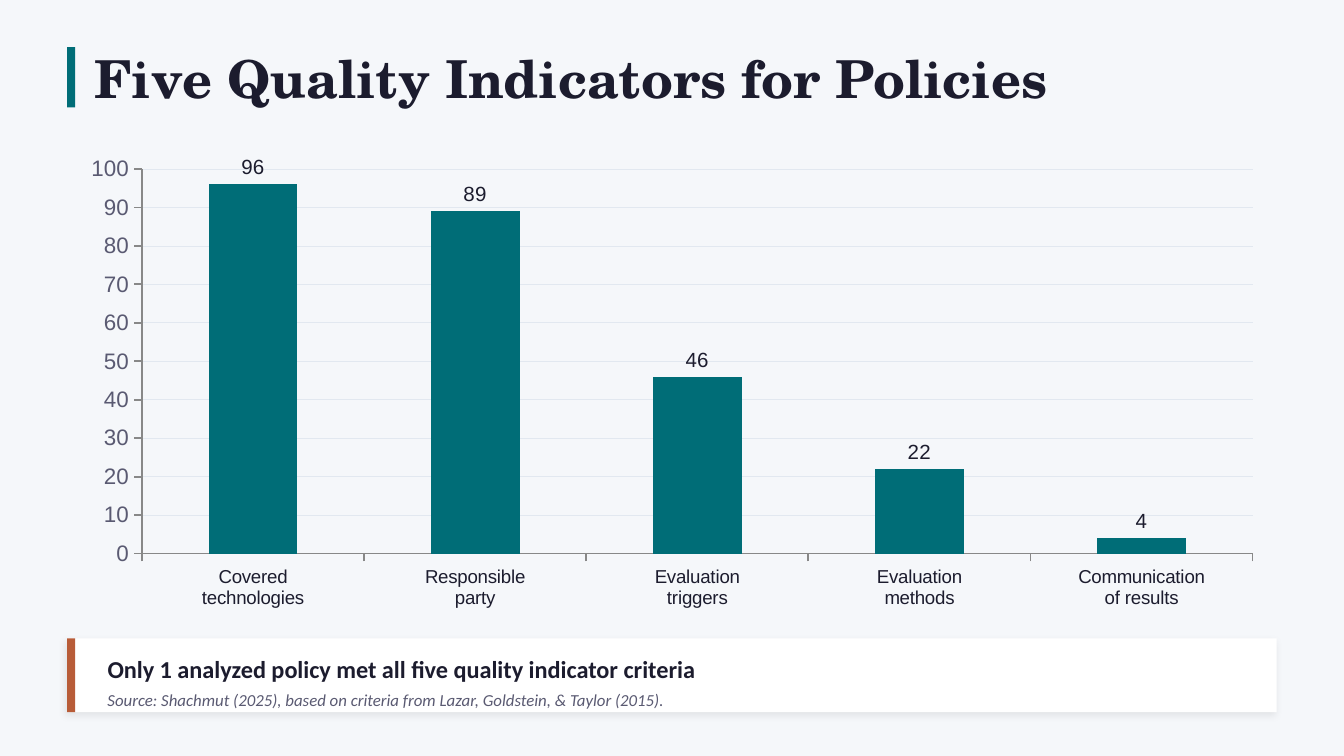
from lxml.etree import SubElement
from pptx import Presentation
from pptx.chart.data import CategoryChartData
from pptx.dml.color import RGBColor
from pptx.enum.chart import XL_CHART_TYPE, XL_LABEL_POSITION, XL_TICK_LABEL_POSITION, XL_TICK_MARK
from pptx.enum.shapes import MSO_SHAPE
from pptx.enum.text import MSO_ANCHOR, PP_ALIGN
from pptx.oxml.ns import qn
from pptx.util import Inches, Pt

COLORS = {
    "bg": "F5F7FA", "teal": "006D77", "ink": "1C1C2E", "muted": "5A5A72",
    "rust": "B85C38", "white": "FFFFFF", "axis": "888888", "grid": "E2E8F0",
    "black": "000000",
}
INDICATORS = {
    "Covered\ntechnologies": 96,
    "Responsible\nparty": 89,
    "Evaluation\ntriggers": 46,
    "Evaluation\nmethods": 22,
    "Communication\nof results": 4,
}


def color(name):
    return RGBColor.from_string(COLORS[name])


def format_font(font, size, fill, name="Calibri", bold=False, italic=False):
    font.size, font.name, font.bold, font.italic = Pt(size), name, bold, italic
    font.color.rgb = color(fill)


def write(sp, text, **style):
    tf = sp.text_frame
    tf.word_wrap = True
    tf.vertical_anchor = MSO_ANCHOR.MIDDLE
    tf.margin_left = tf.margin_top = tf.margin_right = tf.margin_bottom = 0
    p = tf.paragraphs[0]
    p.alignment = PP_ALIGN.LEFT
    r = p.add_run()
    r.text = text
    format_font(r.font, **style)


class SlideBuilder:
    """Hold the slide and add styled elements to it."""

    def __init__(self, prs):
        self.slide = prs.slides.add_slide(prs.slide_layouts[5])
        self.slide.background.fill.solid()
        self.slide.background.fill.fore_color.rgb = color("bg")

    def title(self, text, x, y, w, h):
        sp = self.slide.shapes.title
        sp.left, sp.top, sp.width, sp.height = map(Inches, (x, y, w, h))
        write(sp, text, size=28, fill="ink", name="TeX Gyre Schola", bold=True)

    def text(self, text, x, y, w, h, **style):
        write(self.slide.shapes.add_textbox(*map(Inches, (x, y, w, h))), text, **style)

    def rect(self, fill, x, y, w, h, shadow=False):
        sp = self.slide.shapes.add_shape(MSO_SHAPE.RECTANGLE, *map(Inches, (x, y, w, h)))
        sp.fill.solid()
        sp.fill.fore_color.rgb = color(fill)
        sp.line.fill.background()
        sp.shadow.inherit = False
        if shadow:
            effects = sp._element.spPr.find(qn("a:effectLst"))
            outer = SubElement(effects, qn("a:outerShdw"), blurRad=str(Pt(4)),
                               dist=str(Pt(2)), dir=str(135 * 60000),
                               algn="bl", rotWithShape="0")
            tint = SubElement(outer, qn("a:srgbClr"), val=COLORS["black"])
            SubElement(tint, qn("a:alpha"), val="8000")

    def axis(self, axis, size, fill):
        axis.major_tick_mark = XL_TICK_MARK.OUTSIDE
        axis.minor_tick_mark = XL_TICK_MARK.NONE
        axis.format.line.color.rgb = color("axis")
        axis.format.line.width = Pt(1)
        format_font(axis.tick_labels.font, size, fill, "Arial")

    def column_chart(self, values, x, y, w, h):
        data = CategoryChartData()
        data.categories = list(values)
        data.add_series("Series 1", list(values.values()))
        chart = self.slide.shapes.add_chart(
            XL_CHART_TYPE.COLUMN_CLUSTERED, *map(Inches, (x, y, w, h)), data).chart
        chart.has_legend = chart.has_title = False
        format_font(chart.font, 10, "black")

        categories, scale = chart.category_axis, chart.value_axis
        self.axis(categories, 10, "ink")
        categories.tick_label_position = XL_TICK_LABEL_POSITION.LOW
        categories.has_major_gridlines = False
        self.axis(scale, 12, "muted")
        scale.minimum_scale, scale.maximum_scale, scale.major_unit = 0, 100, 10
        scale.has_major_gridlines = True
        scale.major_gridlines.format.line.color.rgb = color("grid")
        scale.major_gridlines.format.line.width = Pt(0.5)

        plot = chart.plots[0]
        plot.gap_width = 150
        plot.vary_by_categories = False
        bars = plot.series[0]
        bars.format.fill.solid()
        bars.format.fill.fore_color.rgb = color("teal")
        labels = bars.data_labels
        labels.show_value = True
        labels.number_format = "#,##0"
        labels.number_format_is_linked = False
        labels.position = XL_LABEL_POSITION.OUTSIDE_END
        format_font(labels.font, 11, "ink", "Arial")


def main():
    prs = Presentation()
    prs.slide_width, prs.slide_height = Inches(10), Inches(5.625)
    page = SlideBuilder(prs)
    page.rect("teal", 0.5, 0.35, 0.06, 0.45)
    page.title("Five Quality Indicators for Policies", 0.7, 0.3, 8.5, 0.55)
    page.column_chart(INDICATORS, 0.5, 1.1, 9, 3.5)
    page.rect("white", 0.5, 4.75, 9, 0.55, shadow=True)
    page.rect("rust", 0.5, 4.75, 0.06, 0.55)
    page.text("Only 1 analyzed policy met all five quality indicator criteria",
              0.8, 4.8, 8.45, 0.36, size=13, fill="ink", bold=True)
    page.text("Source: Shachmut (2025), based on criteria from Lazar, Goldstein, & Taylor (2015).",
              0.8, 5.03, 9, 0.35, size=9, fill="muted", italic=True)
    prs.save("out.pptx")


if __name__ == "__main__":
    main()
